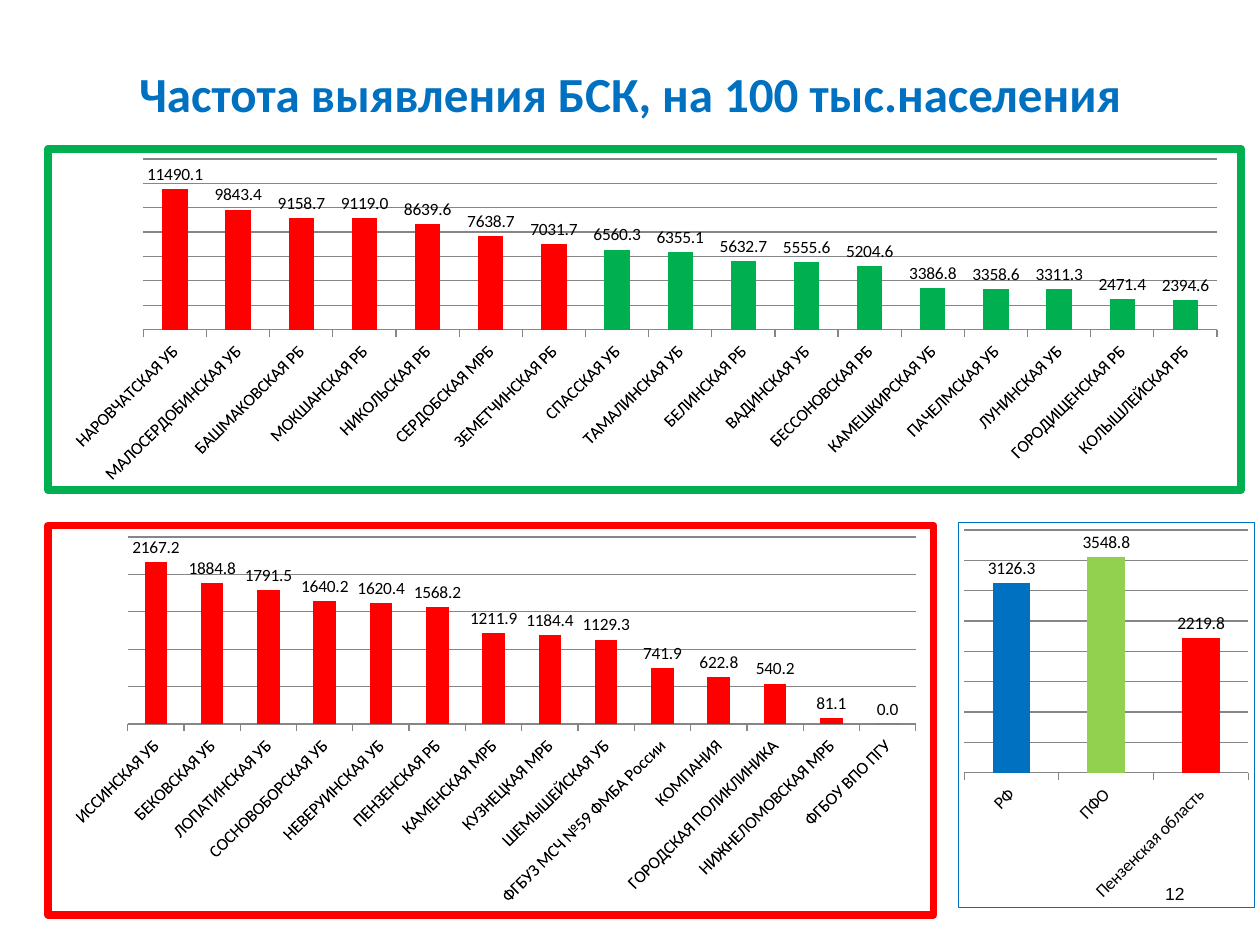
from lxml.etree import SubElement
from pptx import Presentation
from pptx.chart.data import CategoryChartData
from pptx.dml.color import RGBColor
from pptx.enum.chart import XL_CHART_TYPE, XL_LABEL_POSITION, XL_TICK_LABEL_POSITION, XL_TICK_MARK
from pptx.enum.text import MSO_ANCHOR, MSO_AUTO_SIZE, PP_ALIGN
from pptx.oxml import parse_xml
from pptx.oxml.ns import nsdecls, qn
from pptx.util import Inches, Pt

COLORS = {
    "blue": "0070C0",
    "red": "FF0000",
    "green": "00B050",
    "lime": "92D050",
    "black": "000000",
    "grid": "868686",
}

DISTRICTS = {
    "НАРОВЧАТСКАЯ УБ": 11490.1,
    "МАЛОСЕРДОБИНСКАЯ УБ": 9843.4,
    "БАШМАКОВСКАЯ РБ": 9158.7,
    "МОКШАНСКАЯ РБ": 9119.0,
    "НИКОЛЬСКАЯ РБ": 8639.6,
    "СЕРДОБСКАЯ МРБ": 7638.7,
    "ЗЕМЕТЧИНСКАЯ РБ": 7031.7,
    "СПАССКАЯ УБ": 6560.3,
    "ТАМАЛИНСКАЯ УБ": 6355.1,
    "БЕЛИНСКАЯ РБ": 5632.7,
    "ВАДИНСКАЯ УБ": 5555.6,
    "БЕССОНОВСКАЯ РБ": 5204.6,
    "КАМЕШКИРСКАЯ УБ": 3386.8,
    "ПАЧЕЛМСКАЯ УБ": 3358.6,
    "ЛУНИНСКАЯ УБ": 3311.3,
    "ГОРОДИЩЕНСКАЯ РБ": 2471.4,
    "КОЛЫШЛЕЙСКАЯ РБ": 2394.6,
}

LOW_RATES = {
    "ИССИНСКАЯ УБ": 2167.2,
    "БЕКОВСКАЯ УБ": 1884.8,
    "ЛОПАТИНСКАЯ УБ": 1791.5,
    "СОСНОВОБОРСКАЯ УБ": 1640.2,
    "НЕВЕРУИНСКАЯ УБ": 1620.4,
    "ПЕНЗЕНСКАЯ РБ": 1568.2,
    "КАМЕНСКАЯ МРБ": 1211.9,
    "КУЗНЕЦКАЯ МРБ": 1184.4,
    "ШЕМЫШЕЙСКАЯ УБ": 1129.3,
    "ФГБУЗ МСЧ №59 ФМБА России": 741.9,
    "КОМПАНИЯ": 622.8,
    "ГОРОДСКАЯ ПОЛИКЛИНИКА": 540.2,
    "НИЖНЕЛОМОВСКАЯ МРБ": 81.1,
    "ФГБОУ ВПО ПГУ": 0,
}

REGIONS = {"РФ": 3126.3, "ПФО": 3548.8, "Пензенская область": 2219.8}


def rgb(name):
    return RGBColor.from_string(COLORS[name])


def set_font(font, color, **values):
    for attribute, value in values.items():
        setattr(font, attribute, value)
    font.color.rgb = rgb(color)


def write_line(frame, text, align, color, **font_values):
    frame.word_wrap = True
    frame.auto_size = MSO_AUTO_SIZE.NONE
    frame.vertical_anchor = MSO_ANCHOR.MIDDLE
    paragraph = frame.paragraphs[0]
    paragraph.alignment = align
    run = paragraph.add_run()
    run.text = text
    set_font(run.font, color, **font_values)
    return paragraph


def add_title(slide, text):
    title = slide.shapes.title
    title.left, title.top, title.width, title.height = map(Inches, (0.5, 0.3, 9, 0.93))
    line = write_line(title.text_frame, text, PP_ALIGN.CENTER, "blue",
                      name="Calibri", size=Pt(28), bold=True)
    line.line_spacing = 0.9


def add_page_number(slide, number):
    box = slide.shapes.add_textbox(*map(Inches, (7.17, 6.83, 2.33, 0.52)))
    write_line(box.text_frame, number, PP_ALIGN.RIGHT, "black", name="Arial", size=Pt(10))


def frame_chart(chart, color, width):
    """Outline the whole chart and leave its background clear."""
    border = parse_xml(
        f'<c:spPr {nsdecls("c", "a")}><a:noFill/><a:ln w="{Pt(width)}"><a:solidFill>'
        f'<a:srgbClr val="{COLORS[color]}"/></a:solidFill><a:round/></a:ln></c:spPr>')
    chart.element.find(qn("c:chart")).addnext(border)


def place_plot(chart, fractions):
    """Fix the inner plot area as x, y, w, h fractions of the chart."""
    plot_area = chart.element.find(qn("c:chart")).find(qn("c:plotArea"))
    layout = plot_area.find(qn("c:layout"))
    if layout is None:
        layout = plot_area.makeelement(qn("c:layout"))
        plot_area.insert(0, layout)
    manual = SubElement(layout, qn("c:manualLayout"))
    settings = [("layoutTarget", "inner"), ("xMode", "edge"), ("yMode", "edge")]
    for tag, value in settings + list(zip("xywh", fractions)):
        SubElement(manual, qn(f"c:{tag}")).set("val", str(value))


def format_axes(chart, top, step):
    names = chart.category_axis
    names.major_tick_mark = XL_TICK_MARK.OUTSIDE
    names.tick_label_position = XL_TICK_LABEL_POSITION.LOW
    names.format.line.color.rgb = rgb("grid")
    set_font(names.tick_labels.font, "black", size=Pt(10), name="Calibri")
    names._element.find(qn("c:txPr")).find(qn("a:bodyPr")).set("rot", "-2700000")
    rates = chart.value_axis
    scale = {"visible": False, "has_major_gridlines": True,
             "minimum_scale": 0, "maximum_scale": top, "major_unit": step}
    for attribute, value in scale.items():
        setattr(rates, attribute, value)
    grid = rates.major_gridlines.format.line
    grid.color.rgb = rgb("grid")
    grid.width = Pt(0.75)


def add_rate_chart(slide, place, rates, bar_colors, border, plot, top, step):
    data = CategoryChartData(number_format="0.0")
    data.categories = list(rates)
    data.add_series("Series 1", list(rates.values()))
    chart = slide.shapes.add_chart(
        XL_CHART_TYPE.COLUMN_CLUSTERED, *map(Inches, place), data).chart
    chart.has_legend = chart.has_title = False
    set_font(chart.font, "black", size=Pt(10), name="Calibri")
    frame_chart(chart, *border)
    place_plot(chart, plot)
    format_axes(chart, top, step)

    # Bars and their values
    columns = chart.plots[0]
    columns.gap_width = 150
    columns.vary_by_categories = False
    series = columns.series[0]
    base = bar_colors[-1]
    series.format.fill.solid()
    series.format.fill.fore_color.rgb = rgb(base)
    for index, color in enumerate(bar_colors):
        if color != base:
            fill = series.points[index].format.fill
            fill.solid()
            fill.fore_color.rgb = rgb(color)
    labels = series.data_labels
    label_format = {"show_value": True, "number_format": "0.0",
                    "number_format_is_linked": False,
                    "position": XL_LABEL_POSITION.OUTSIDE_END}
    for attribute, value in label_format.items():
        setattr(labels, attribute, value)
    set_font(labels.font, "black", size=Pt(10), name="Calibri")


def main():
    presentation = Presentation()
    presentation.slide_width, presentation.slide_height = Inches(10), Inches(7.5)
    slide = presentation.slides.add_slide(presentation.slide_layouts[5])

    add_title(slide, "Частота выявления БСК, на 100 тыс.населения")
    add_page_number(slide, "12")

    # Country, federal district and region
    add_rate_chart(slide, (7.6, 4.14, 2.36, 3.07), REGIONS, ["blue", "lime", "red"],
                   ("blue", 0.75), (0.02, 0.02, 0.96, 0.63), 4000, 500)
    # Hospitals with the highest rates: the first seven stand out
    add_rate_chart(slide, (0.35, 1.15, 9.53, 2.77), DISTRICTS, ["red"] * 7 + ["green"],
                   ("green", 4.5), (0.08, 0.03, 0.9, 0.5), 14000, 2000)
    # Hospitals with the lowest rates
    add_rate_chart(slide, (0.35, 4.14, 7.09, 3.15), LOW_RATES, ["red"],
                   ("red", 4.5), (0.09, 0.03, 0.89, 0.48), 2500, 500)

    presentation.save("out.pptx")


if __name__ == "__main__":
    main()
